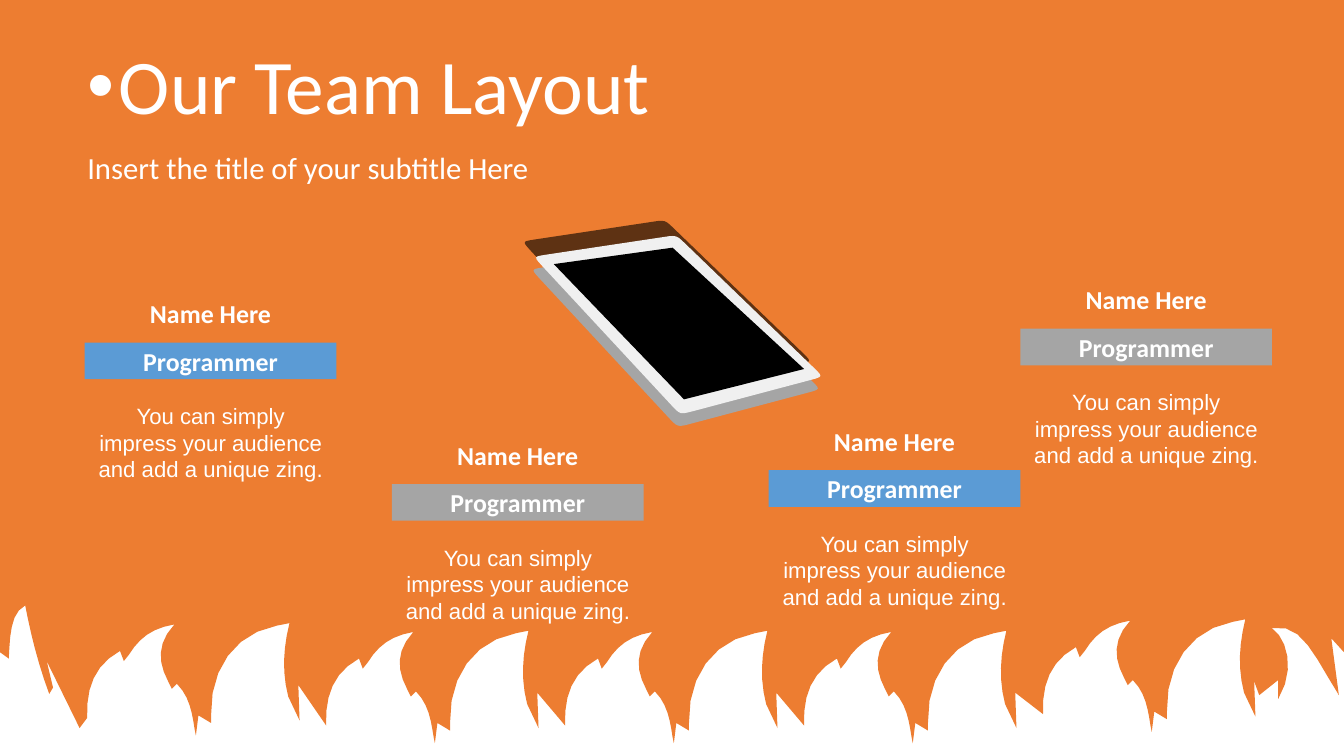
from math import dist
from lxml.etree import SubElement
from pptx import Presentation
from pptx.dml.color import RGBColor
from pptx.enum.shapes import MSO_SHAPE
from pptx.enum.text import MSO_ANCHOR, MSO_AUTO_SIZE, PP_ALIGN
from pptx.oxml.ns import qn
from pptx.util import Inches, Pt

WIDTH, HEIGHT = 10.63, 5.91
WHITE, ORANGE, BLUE, GRAY = "FFFFFF", "ED7D31", "5B9BD5", "A5A5A5"

LEFT_FLAME = [(0, 5.16), (0.07, 5.21), (0.08, 5.04, 0.08, 4.85, 0.2, 4.79),
              (0.24, 5, 0.3, 5.25, 0.39, 5.49), (0.42, 5.44), (0.37, 5.23), (0.63, 5.76)]
FLAME_PAIR = [
    (0, 0), (-0.01, -0.24, 0.06, -0.42, 0.26, -0.53), (0.29, -0.45), (0.33, -0.5),
    (0.41, -0.63, 0.51, -0.71, 0.69, -0.74), (0.55, -0.59, 0.56, -0.44, 0.64, -0.29),
    (0.67, -0.23), (0.71, -0.27), (0.81, -0.17, 0.83, -0.04, 0.85, 0.09), (0.86, 0.14),
    (0.88, -0.02), (0.98, 0.04), (0.98, -0.02), (0.97, -0.39, 1.17, -0.67, 1.5, -0.73),
    (1.6, -0.75), (1.55, -0.55, 1.54, -0.36, 1.59, -0.17), (1.68, 0.02), (1.67, -0.26),
]
RIGHT_FLAME = [(9.96, 5.5), (10.11, 5.38), (10.11, 5.53), (10.25, 5.3, 10.18, 5.05, 10.06, 4.97),
               (10.3, 4.92, 10.4, 5.2, 10.59, 5.5), (10.53, 5.05), (WIDTH, 5.16)]
TABLET = [(-0.03, 0.15), (1.1, -0.02), (2.26, 1.1), (1.13, 1.4)]
SCREEN = [(0.13, 0.21), (1.07, 0.08), (2.11, 1.04), (1.16, 1.28)]


def color(hex_value):
    return RGBColor.from_string(hex_value)


def shift(outline, x, y):
    return [tuple(v + (y if i % 2 else x) for i, v in enumerate(item)) for item in outline]


def flame_outline():
    outline = list(LEFT_FLAME)
    for i, base in enumerate((5.68, 5.74, 5.74, 5.74, 5.65)):
        outline += shift(FLAME_PAIR, 0.69 + 1.89 * i, base)
    return outline + RIGHT_FLAME + [(WIDTH, 0), (0, 0)]


def rounded(corners, cut=0.1):
    outline = []
    for i, corner in enumerate(corners):
        before, after = (
            tuple(c + (n - c) * cut / dist(corner, near) for c, n in zip(corner, near))
            for near in (corners[i - 1], corners[(i + 1) % len(corners)]))
        outline += [before, corner + corner + after]
    return outline


def flatten(outline, steps=6):
    points = [outline[0]]
    for item in outline[1:]:
        if len(item) == 2:
            points.append(item)
            continue
        nodes = [points[-1], item[:2], item[2:4], item[4:]]
        for i in range(1, steps + 1):
            t = i / steps
            weights = ((1 - t) ** 3, 3 * t * (1 - t) ** 2, 3 * t * t * (1 - t), t ** 3)
            points.append(tuple(sum(w * n[axis] for w, n in zip(weights, nodes)) for axis in (0, 1)))
    return points


def paint(sp, fill):
    sp.shadow.inherit = False
    sp.fill.solid()
    sp.fill.fore_color.rgb = color(fill)
    sp.line.fill.background()


def add_outline(shapes, outline, fill):
    points = [(Inches(x), Inches(y)) for x, y in flatten(outline)]
    builder = shapes.build_freeform(*points[0])
    builder.add_line_segments(points[1:], close=True)
    sp = builder.convert_to_shape()
    paint(sp, fill)
    return sp


def add_run(p, text, size, font="Calibri", bold=False):
    r = p.add_run()
    r.text = text
    r.font.size, r.font.name, r.font.bold = Pt(size), font, bold
    r.font.color.rgb = color(WHITE)


def heading(sp, text, size, spacing, x, y, w, h, bullet=None):
    sp.left, sp.top, sp.width, sp.height = (Inches(v) for v in (x, y, w, h))
    tf = sp.text_frame
    tf.auto_size, tf.vertical_anchor = MSO_AUTO_SIZE.NONE, MSO_ANCHOR.TOP
    tf.margin_top = Inches(0.08)
    p = tf.paragraphs[0]
    p.alignment, p.line_spacing, p.space_before = PP_ALIGN.LEFT, spacing, Pt(0)
    add_run(p, text, size)
    pPr = p._p.get_or_add_pPr()
    indent = Inches(0.25) if bullet else 0
    pPr.set("marL", str(indent))
    pPr.set("indent", str(-indent))
    if bullet:
        SubElement(pPr, qn("a:buFont")).set("typeface", "Arial")
        SubElement(pPr, qn("a:buChar")).set("char", bullet)
    else:
        SubElement(pPr, qn("a:buNone"))


def card_text(sp, text, size, font="Calibri", bold=False):
    tf = sp.text_frame
    tf.word_wrap, tf.vertical_anchor = True, MSO_ANCHOR.MIDDLE
    p = tf.paragraphs[0]
    p.alignment = PP_ALIGN.CENTER
    add_run(p, text, size, font, bold)


def member_card(s, x, y, fill, w=1.99):
    shapes = s.shapes.add_group_shape().shapes
    left, width = Inches(x), Inches(w)
    name = shapes.add_textbox(left, Inches(y), width, Inches(0.28))
    card_text(name, "Name Here", 14.7, bold=True)
    role = shapes.add_shape(MSO_SHAPE.RECTANGLE, left, Inches(y + 0.37), width, Inches(0.29))
    paint(role, fill)
    card_text(role, "Programmer", 14.7, bold=True)
    about = shapes.add_textbox(left, Inches(y + 0.79), width, Inches(0.74))
    card_text(about, "You can simply impress your audience and add a unique zing.", 12.6, "Arial")


def tablet(s, x, y):
    shapes = s.shapes.add_group_shape().shapes
    body = rounded(TABLET)
    for outline, dx, dy, fill in ((body, -0.09, -0.12, "5E3213"), (body, -0.02, 0.1, GRAY),
                                  (body, 0, 0, "F0F0F0"), (SCREEN, 0, 0, "000000")):
        add_outline(shapes, shift(outline, x + dx, y + dy), fill)


def team_slide(prs):
    s = prs.slides.add_slide(prs.slide_layouts[1])
    title, body = s.placeholders
    backdrop = add_outline(s.shapes, flame_outline(), ORANGE)
    title.element.addprevious(backdrop.element)
    heading(title, "Our Team Layout", 44, 0.9, 0.59, 0.3, WIDTH - 0.59, 0.66, "•")
    heading(body, "Insert the title of your subtitle Here", 17.5, 0.7, 0.59, 1.18, WIDTH - 0.59, 0.33)
    for x, y, fill in ((0.67, 2.34, BLUE), (8.07, 2.23, GRAY), (6.08, 3.35, BLUE), (3.1, 3.46, GRAY)):
        member_card(s, x, y, fill)
    tablet(s, 4.25, 1.88)


def main():
    prs = Presentation()
    prs.slide_width, prs.slide_height = Inches(WIDTH), Inches(HEIGHT)
    team_slide(prs)
    prs.save("out.pptx")


if __name__ == "__main__":
    main()
